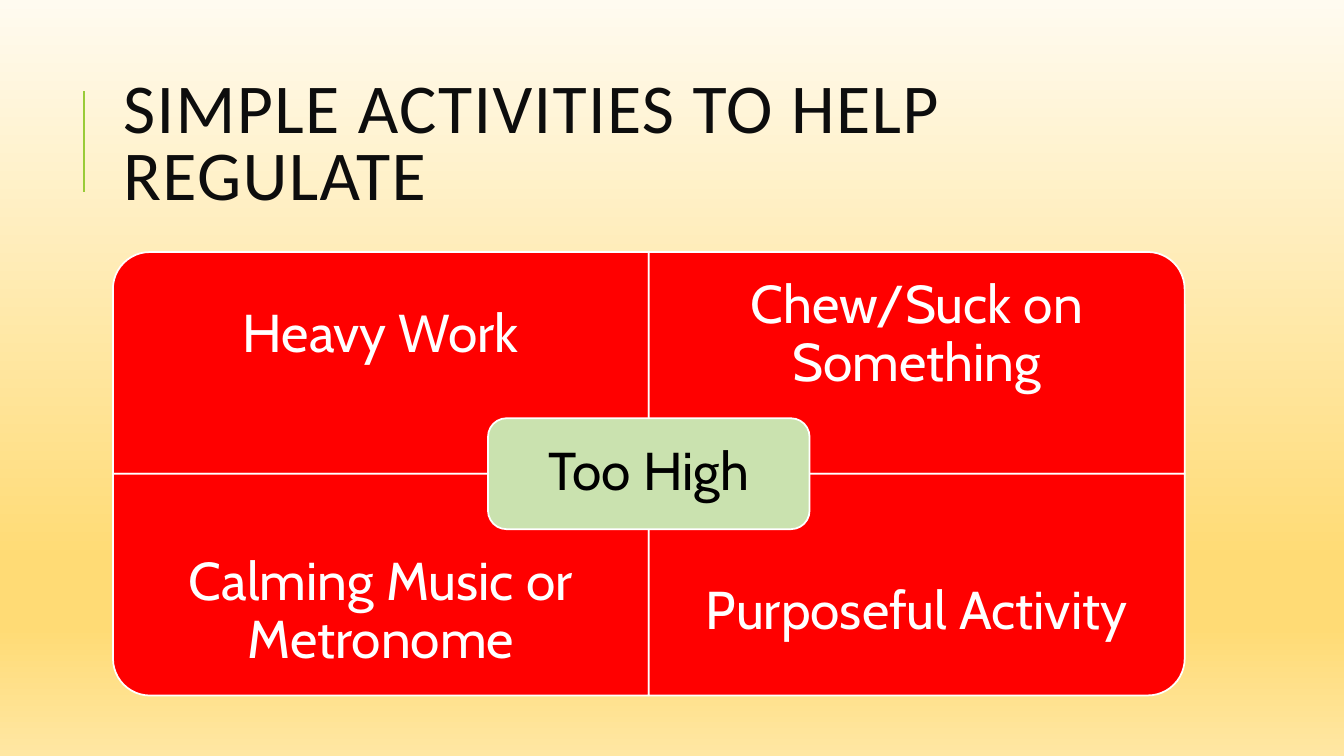
from copy import deepcopy

from lxml import etree
from pptx import Presentation
from pptx import util as u
from pptx.dml.color import RGBColor
from pptx.enum import shapes, text
from pptx.oxml.ns import qn

COLORS = {"panel": "FF0000", "label": "CAE2AF", "edge": "FFFFFF", "light": "FFFFFF",
          "dark": "000000", "title": "0D0D0D", "accent": "99CB38"}
SKY = [(0, "FFFBF0"), (0.74, "FFDB75"), (0.83, "FFDB75"), (1, "FFE7A3")]
LEFT, TOP, WIDE, HIGH = 1.12, 2.5, 5.315, 2.2
PANELS = [("Heavy Work", 0, 0, 270), ("Chew/Suck on Something", 1, 0, 0),
          ("Calming Music or Metronome", 0, 1, 180), ("Purposeful Activity", 1, 1, 90)]


class Deck:
    font, size = "Cabin", 38

    def __init__(self):
        self.prs = Presentation()
        self.prs.slide_width, self.prs.slide_height = u.Inches(13.33), u.Inches(7.5)
        self.slide = self.prs.slides.add_slide(self.prs.slide_layouts[5])

    def color(self, name):
        return RGBColor.from_string(COLORS[name])

    def backdrop(self, stops):
        fill = self.slide.background.fill
        fill.gradient()
        fill.gradient_angle = 270
        group = next(self.slide.element.iter(qn("a:gsLst")))
        while len(group) < len(stops):
            group.append(deepcopy(group[-1]))
        for stop, (place, tone) in zip(fill.gradient_stops, stops):
            stop.position = place
            stop.color.rgb = RGBColor.from_string(tone)

    def letter(self, shape, words, tone, inset, size=size, font=font, space=0.9):
        """Fill a shape with one vertically centred paragraph and return its run."""
        frame = shape.text_frame
        frame.word_wrap = True
        frame.auto_size = text.MSO_AUTO_SIZE.NONE
        frame.vertical_anchor = text.MSO_ANCHOR.MIDDLE
        frame.margin_left = frame.margin_right = u.Inches(inset)
        frame.margin_top = frame.margin_bottom = u.Inches(inset)
        para = frame.paragraphs[0]
        para.alignment = text.PP_ALIGN.CENTER
        para.line_spacing = space
        run = para.add_run()
        run.text = words
        run.font.name, run.font.size = font, u.Pt(size)
        run.font.color.rgb = self.color(tone)
        return run

    def title(self, words, *box):
        shape = self.slide.shapes.title
        shape.left, shape.top, shape.width, shape.height = map(u.Inches, box)
        run = self.letter(shape, words, "title", 0.1, 50, "Calibri", 0.8)
        shape.text_frame.paragraphs[0].alignment = text.PP_ALIGN.LEFT
        run._r.get_or_add_rPr().set("spc", "100")

    def rule(self, *ends):
        line = self.slide.shapes.add_connector(
            shapes.MSO_CONNECTOR.STRAIGHT, *map(u.Inches, ends))
        line.line.color.rgb = self.color("accent")
        line.line.width = u.Pt(1.5)
        etree.SubElement(line._element.spPr, qn("a:effectLst"))

    def block(self, kind, tone, *box):
        shape = self.slide.shapes.add_shape(kind, *map(u.Inches, box))
        shape.shadow.inherit = False
        shape.fill.solid()
        shape.fill.fore_color.rgb = self.color(tone)
        shape.line.color.rgb = self.color("edge")
        shape.line.width = u.Pt(1.25)
        return shape

    def panel(self, words, col, row, turn):
        """Draw a quadrant with its rounded corner outward, and upright text over it."""
        left, top = LEFT + col * WIDE, TOP + row * HIGH
        wide, high = (HIGH, WIDE) if turn % 180 else (WIDE, HIGH)
        shape = self.block(shapes.MSO_SHAPE.ROUND_1_RECTANGLE, "panel",
                           left + (WIDE - wide) / 2, top + (HIGH - high) / 2, wide, high)
        shape.rotation = turn
        box = self.slide.shapes.add_textbox(
            u.Inches(left), u.Inches(top + row * HIGH / 4),
            u.Inches(WIDE), u.Inches(HIGH * 3 / 4))
        self.letter(box, words, "light", 0.3)

    def label(self, words):
        """Draw the box where the four panels meet."""
        wide, high = WIDE * 0.6, HIGH / 2
        shape = self.block(shapes.MSO_SHAPE.ROUNDED_RECTANGLE, "label",
                           LEFT + WIDE - wide / 2, TOP + HIGH - high / 2, wide, high)
        self.letter(shape, words, "dark", 0.2)


def main():
    deck = Deck()
    deck.backdrop(SKY)
    deck.rule(0.83, 1.9, 0.83, 0.9)
    deck.title("SIMPLE ACTIVITIES TO HELP REGULATE", LEFT, 0.64, 2 * WIDE, 1.64)
    for panel in PANELS:
        deck.panel(*panel)
    deck.label("Too High")
    deck.prs.save("out.pptx")


if __name__ == "__main__":
    main()
